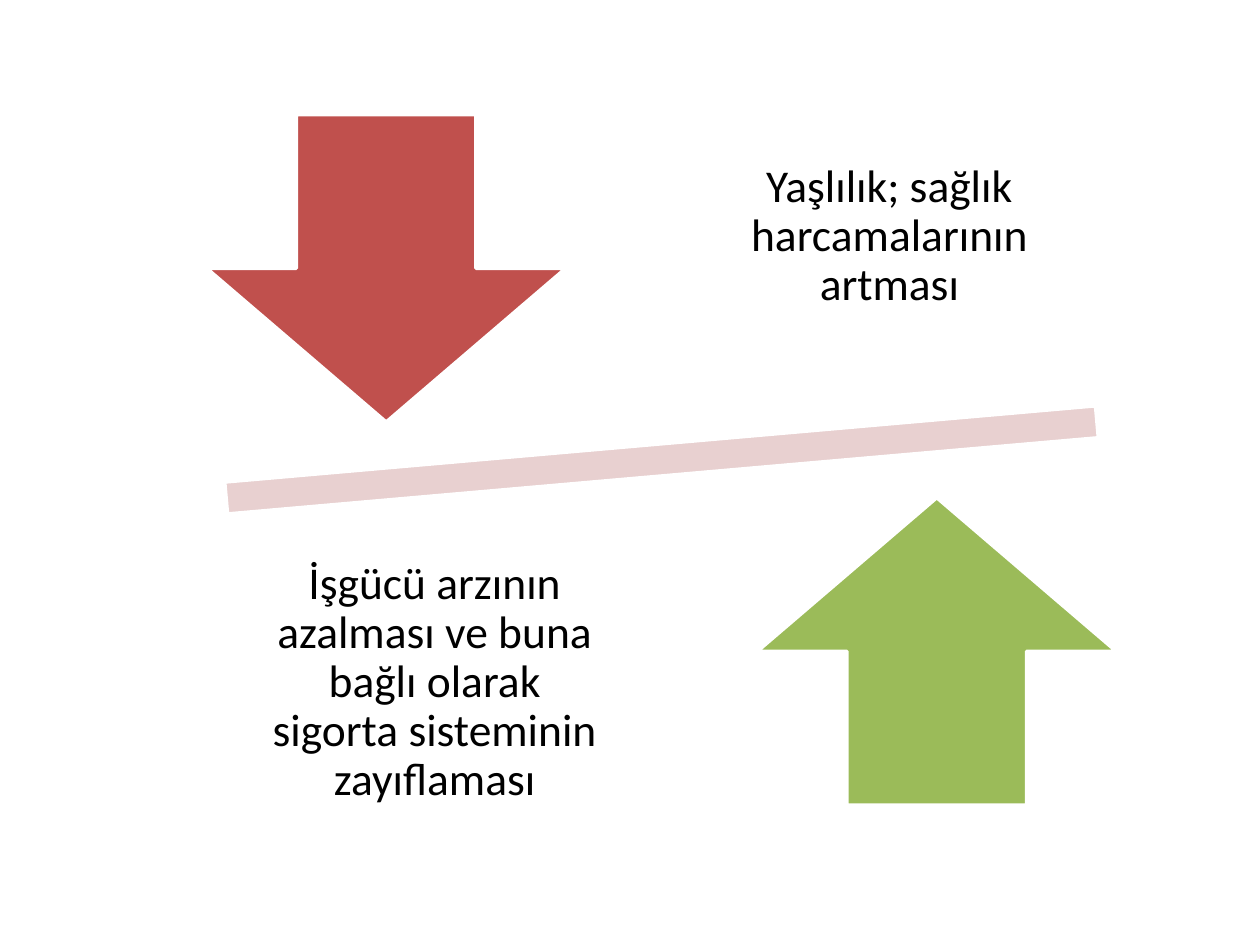
from dataclasses import dataclass

from pptx import Presentation
from pptx.dml.color import RGBColor
from pptx.enum.shapes import MSO_SHAPE
from pptx.enum.text import MSO_ANCHOR, PP_ALIGN
from pptx.util import Pt

MINUS = MSO_SHAPE.MATH_MINUS
DOWN_ARROW = MSO_SHAPE.DOWN_ARROW
UP_ARROW = MSO_SHAPE.UP_ARROW
MIDDLE = MSO_ANCHOR.MIDDLE
CENTER = PP_ALIGN.CENTER
BLANK_LAYOUT = 6


@dataclass(frozen=True)
class Theme:
    beam: RGBColor = RGBColor(0xE8, 0xD0, 0xD0)
    falling: RGBColor = RGBColor(0xC0, 0x50, 0x4D)
    rising: RGBColor = RGBColor(0x9B, 0xBB, 0x59)
    outline: RGBColor = RGBColor(0xFF, 0xFF, 0xFF)
    text: RGBColor = RGBColor(0, 0, 0)
    font: str = "Calibri"
    text_size: int = 26
    outline_width: int = 2


THEME = Theme()
ARROW_SIZE = (205.2, 175.7)
LABEL_SIZE = (218.9, 184.3)


def apply_format(target, values):
    """Set each named attribute of the target."""
    for name, value in values.items():
        setattr(target, name, value)


def add_symbol(slide, kind, position, size, color, rotation=0):
    """Add a filled preset shape with the theme outline."""
    shape = slide.shapes.add_shape(kind, *map(Pt, position + size))
    shape.rotation = rotation
    shape.shadow.inherit = False
    shape.fill.solid()
    shape.fill.fore_color.rgb = color
    shape.line.color.rgb = THEME.outline
    shape.line.width = Pt(THEME.outline_width)


def add_label(slide, position, text):
    """Add a centred, wrapping label."""
    frame = slide.shapes.add_textbox(*map(Pt, position + LABEL_SIZE)).text_frame
    margins = dict.fromkeys(
        ("margin_left", "margin_top", "margin_right", "margin_bottom"), Pt(14.4)
    )
    apply_format(frame, {"word_wrap": True, "vertical_anchor": MIDDLE, **margins})
    paragraph = frame.paragraphs[0]
    paragraph.text = text
    apply_format(paragraph, {
        "alignment": CENTER,
        "line_spacing": 0.9,
        "space_after": Pt(0.35 * THEME.text_size),
    })
    apply_format(paragraph.font, {"name": THEME.font, "size": Pt(THEME.text_size)})
    paragraph.font.color.rgb = THEME.text


def main():
    """Build and save the balance slide."""
    presentation = Presentation()
    apply_format(presentation, {"slide_width": Pt(720), "slide_height": Pt(540)})
    slide = presentation.slides.add_slide(presentation.slide_layouts[BLANK_LAYOUT])

    add_symbol(slide, MINUS, (38.2, 223.9), (679.7, 77.8), THEME.beam, 355)
    add_symbol(slide, DOWN_ARROW, (118.1, 65.5), ARROW_SIZE, THEME.falling)
    add_label(slide, (398.9, 43.2), "Yaşlılık; sağlık harcamalarının artması")
    add_symbol(slide, UP_ARROW, (432.7, 284.4), ARROW_SIZE, THEME.rising)
    add_label(
        slide,
        (139, 298.1),
        "İşgücü arzının azalması ve buna bağlı olarak sigorta sisteminin zayıflaması",
    )

    presentation.save("out.pptx")


if __name__ == "__main__":
    main()
